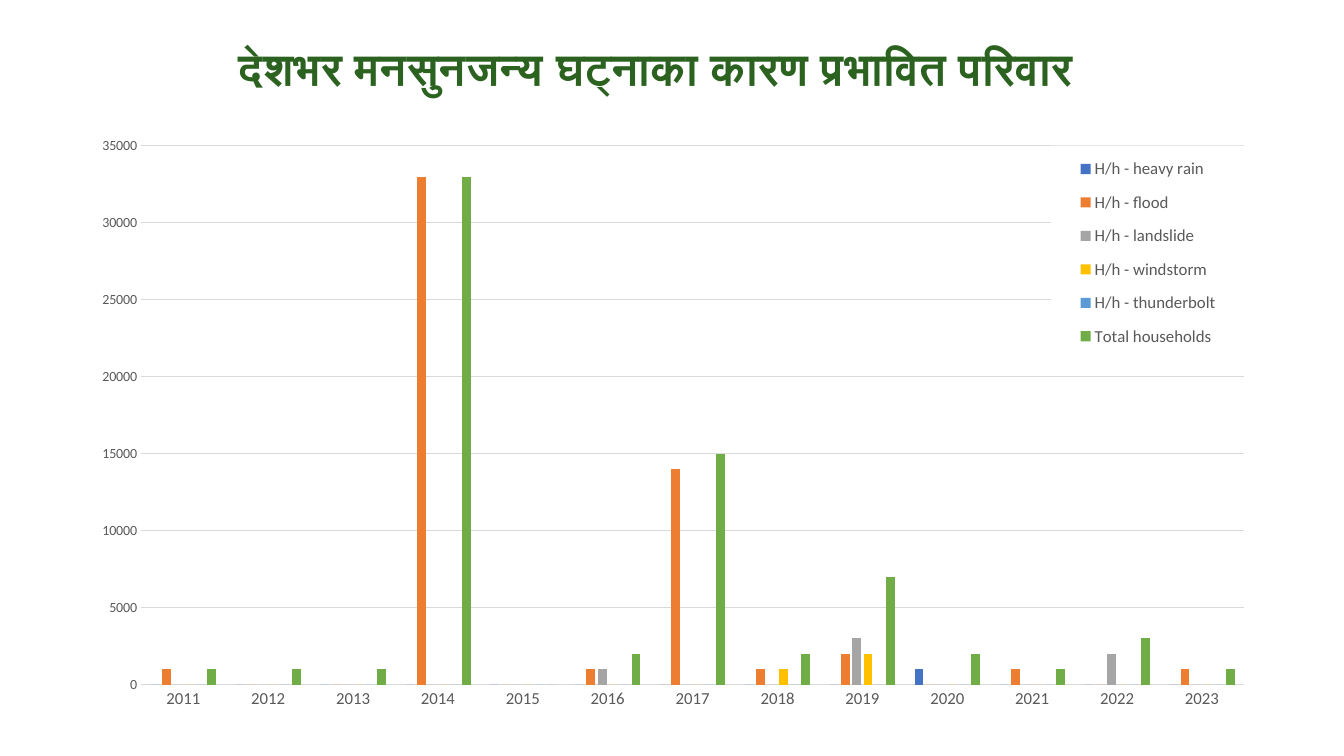
from lxml import etree
from pptx import Presentation
from pptx.chart.data import CategoryChartData
from pptx.dml.color import RGBColor
from pptx.enum.chart import XL_CHART_TYPE as ChartType, XL_LEGEND_POSITION as LegendPos, XL_TICK_MARK as Tick
from pptx.enum.text import MSO_ANCHOR as Anchor, PP_ALIGN as Align
from pptx.oxml import parse_xml
from pptx.oxml.ns import nsdecls
from pptx.util import Cm, Pt


def paint(color, hex_code):
    color.rgb = RGBColor.from_string(hex_code)


def write(text, frame=None, font=None, size=12, color="595959", bold=False):
    """Format a chart font, or put formatted text into a text frame."""
    if frame is not None:
        frame.text = text
        paragraph = frame.paragraphs[0]
        paragraph.alignment = Align.CENTER
        paragraph.line_spacing = 1.0
        font = paragraph.runs[0].font
    font.name, font.size, font.bold = "Calibri", Pt(size), bold
    paint(font.color, color)


prs = Presentation()
prs.slide_width, prs.slide_height = Cm(33.87), Cm(19.05)
slide = prs.slides.add_slide(prs.slide_layouts[5])

# Title
title = slide.shapes.title
title.left, title.top, title.width, title.height = Cm(4.83), Cm(0.89), Cm(23.7), Cm(1.63)
title.text_frame.word_wrap = False
title.text_frame.vertical_anchor = Anchor.MIDDLE
write("देशभर मनसुनजन्य घट्नाका कारण प्रभावित परिवार ", frame=title.text_frame,
      size=32, color="2C6220", bold=True)

# Affected households by hazard and year, in thousands
hazards = [
    ("H/h - heavy rain", "4472C4", [0, 0, 0, 0, 0, 0, 0, 0, 0, 1, 0, 0, 0]),
    ("H/h - flood", "ED7D31", [1, 0, 0, 33, 0, 1, 14, 1, 2, 0, 1, 0, 1]),
    ("H/h - landslide", "A5A5A5", [0, 0, 0, 0, 0, 1, 0, 0, 3, 0, 0, 2, 0]),
    ("H/h - windstorm", "FFC000", [0, 0, 0, 0, 0, 0, 0, 1, 2, 0, 0, 0, 0]),
    ("H/h - thunderbolt", "5B9BD5", [0] * 13),
    ("Total households", "70AD47", [1, 1, 1, 33, 0, 2, 15, 2, 7, 2, 1, 3, 1]),
]
households = CategoryChartData()
households.categories = [str(year) for year in range(2011, 2024)]
for name, _, thousands in hazards:
    households.add_series(name, [1000 * count for count in thousands])
chart = slide.shapes.add_chart(ChartType.COLUMN_CLUSTERED, Cm(1.98), Cm(3.18),
                               Cm(29.95), Cm(14.99), households).chart
chart.has_title = False
chart.font.name, chart.font.size = "Calibri", Pt(10)
paint(chart.font.color, "000000")

# Columns
columns = chart.plots[0]
columns.gap_width, columns.overlap, columns.vary_by_categories = 219, -27, False
for series, (_, hex_code, _) in zip(columns.series, hazards):
    series.format.fill.solid()
    paint(series.format.fill.fore_color, hex_code)

# Axes and gridlines
years, counts_axis = chart.category_axis, chart.value_axis
for axis, size in ((years, 12), (counts_axis, 10)):
    axis.major_tick_mark = axis.minor_tick_mark = Tick.NONE
    write("", font=axis.tick_labels.font, size=size)
counts_axis.minimum_scale, counts_axis.maximum_scale, counts_axis.major_unit = 0, 35000, 5000
counts_axis.format.line.fill.background()
counts_axis.has_major_gridlines = True
for line in (years.format.line, counts_axis.major_gridlines.format.line):
    line.width = Pt(0.75)
    paint(line.color, "D9D9D9")

# Legend over the plot, on a white ground
chart.has_legend = True
legend = chart.legend
legend.position, legend.include_in_layout = LegendPos.RIGHT, True
write("", font=legend.font)
ground = parse_xml(f'<c:spPr {nsdecls("c", "a")}><a:solidFill><a:srgbClr val="FFFFFF"/></a:solidFill>'
                   '<a:ln><a:noFill/></a:ln></c:spPr>')
legend._element.find("{*}txPr").addprevious(ground)

# Fixed places of plot and legend, as shares of the chart
plot_area = chart._chartSpace.chart.plotArea
places = [(plot_area, 0, True, (0.0525, 0.033, 0.9285, 0.906)),
          (legend._element, 1, False, (0.818, 0.0325, 0.164, 0.36))]
for part, index, inner, shares in places:
    for old in part.findall("{*}layout"):
        part.remove(old)
    layout = parse_xml(f'<c:layout {nsdecls("c")}><c:manualLayout/></c:layout>')
    settings = [("layoutTarget", "inner")] if inner else []
    settings += [("xMode", "edge"), ("yMode", "edge"), *zip("xywh", shares)]
    for tag, value in settings:
        etree.SubElement(layout[0], etree.QName(layout.nsmap["c"], tag), val=str(value))
    part.insert(index, layout)

prs.save("out.pptx")
